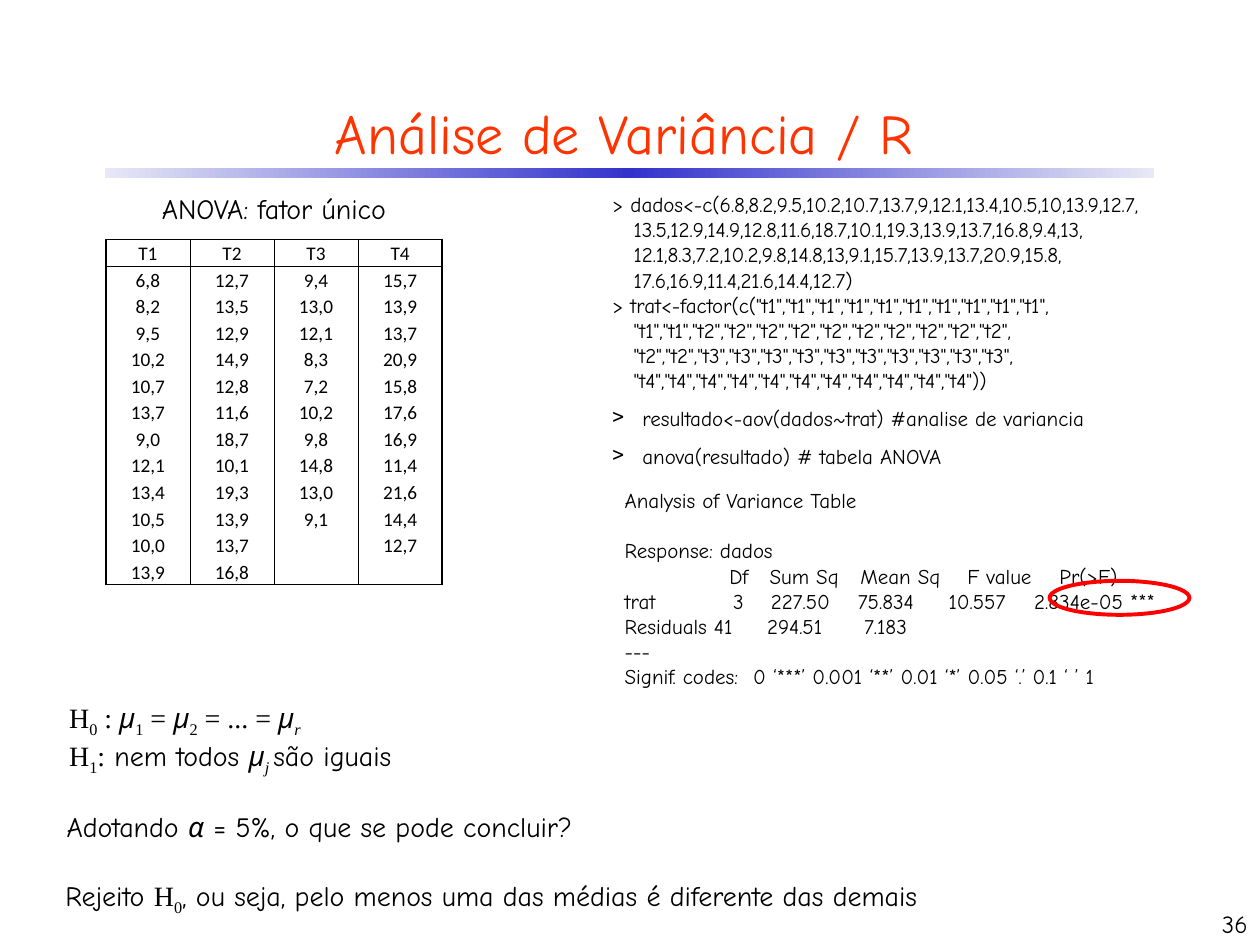
from copy import deepcopy
from dataclasses import dataclass

from lxml.etree import SubElement
from pptx import Presentation
from pptx.dml.color import RGBColor
from pptx.enum.shapes import MSO_SHAPE
from pptx.enum.text import MSO_ANCHOR, MSO_AUTO_SIZE, PP_ALIGN
from pptx.oxml.ns import qn
from pptx.util import Inches, Pt


@dataclass(frozen=True)
class Theme:
    black: RGBColor = RGBColor(0, 0, 0)
    white: RGBColor = RGBColor(255, 255, 255)
    title: RGBColor = RGBColor(0xFF, 0x33, 0x00)
    highlight: RGBColor = RGBColor(255, 0, 0)
    bar_edge: RGBColor = RGBColor(0xE8, 0xE8, 0xF6)
    bar_middle: RGBColor = RGBColor(0x33, 0x33, 0xCC)
    hand: str = "Comic Neue"
    serif: str = "Times New Roman"
    sans: str = "Calibri"
    title_size: int = 32
    body_size: int = 16
    number_size: int = 14
    code_size: int = 12
    table_size: int = 11


THEME = Theme()

SAMPLES = {
    "T1": "6,8 8,2 9,5 10,2 10,7 13,7 9,0 12,1 13,4 10,5 10,0 13,9",
    "T2": "12,7 13,5 12,9 14,9 12,8 11,6 18,7 10,1 19,3 13,9 13,7 16,8",
    "T3": "9,4 13,0 12,1 8,3 7,2 10,2 9,8 14,8 13,0 9,1",
    "T4": "15,7 13,9 13,7 20,9 15,8 17,6 16,9 11,4 21,6 14,4 12,7",
}

COMMANDS = [
    "> dados<-c(6.8,8.2,9.5,10.2,10.7,13.7,9,12.1,13.4,10.5,10,13.9,12.7,\v"
    "13.5,12.9,14.9,12.8,11.6,18.7,10.1,19.3,13.9,13.7,16.8,9.4,13,\v"
    "12.1,8.3,7.2,10.2,9.8,14.8,13,9.1,15.7,13.9,13.7,20.9,15.8,\v"
    "17.6,16.9,11.4,21.6,14.4,12.7)",
    '> trat<-factor(c("t1","t1","t1","t1","t1","t1","t1","t1","t1","t1",\v'
    '"t1","t1","t2","t2","t2","t2","t2","t2","t2","t2","t2","t2",\v'
    '"t2","t2","t3","t3","t3","t3","t3","t3","t3","t3","t3","t3",\v'
    '"t4","t4","t4","t4","t4","t4","t4","t4","t4","t4","t4"))',
]
PROMPTED_COMMANDS = [
    "resultado<-aov(dados~trat) #analise de variancia",
    "anova(resultado) # tabela ANOVA",
]

ANOVA_OUTPUT = [
    ("Analysis of Variance Table", []),
    ("Response: dados", []),
    ("\tDf\tSum Sq\tMean Sq\tF value\tPr(>F)", [0.83, 1.15, 1.87, 2.72, 3.45]),
    ("trat\t3\t227.50\t75.834\t10.557\t2.834e-05 ***", [0.86, 1.16, 1.85, 2.57, 3.25]),
    ("Residuals 41\t294.51\t7.183", [1.13, 1.9]),
    ("---", []),
    ("Signif. codes:\t0 ‘***’ 0.001 ‘**’ 0.01 ‘*’ 0.05 ‘.’ 0.1 ‘ ’ 1", [1.02]),
]

SERIF, SUB, ITALIC = "serif", "sub", "italic"
HYPOTHESES = [
    [("H", {SERIF}), ("0", {SERIF, SUB}), (" : ", {SERIF}),
     ("μ", {ITALIC}), ("1", {SERIF, SUB}), (" = ", {SERIF}),
     ("μ", {ITALIC}), ("2", {SERIF, SUB}), (" = ... = ", {SERIF}),
     ("μ", {ITALIC}), ("r", {SERIF, SUB, ITALIC})],
    [("H", {SERIF}), ("1", {SERIF, SUB}), (":", {SERIF}), (" nem todos ", set()),
     ("μ", {ITALIC}), ("j ", {SERIF, SUB, ITALIC}), ("são iguais", set())],
]
QUESTION = [("Adotando ", set()), ("α ", {ITALIC}), ("= 5%, o que se pode concluir?", set())]
CONCLUSION = [
    ("Rejeito ", set()), ("H", {SERIF}), ("0", {SERIF, SUB}),
    (", ou seja, pelo menos uma das médias é diferente das demais", set()),
]


def format_runs(paragraph, size, font=THEME.hand, color=THEME.black):
    for run in paragraph.runs:
        run.font.name = font
        run.font.size = Pt(size)
        run.font.color.rgb = color


def add_text(slide, place, lines, size=THEME.body_size, align=PP_ALIGN.LEFT):
    box = slide.shapes.add_textbox(*map(Inches, place))
    frame = box.text_frame
    frame.word_wrap = True
    frame.auto_size = MSO_AUTO_SIZE.SHAPE_TO_FIT_TEXT
    frame.text = "\n".join(lines)
    for paragraph in frame.paragraphs:
        paragraph.alignment = align
        format_runs(paragraph, size)
    return frame


def add_formula(slide, place, lines):
    frame = add_text(slide, place, [""] * len(lines))
    for paragraph, pieces in zip(frame.paragraphs, lines):
        for text, _ in pieces:
            paragraph.add_run().text = text
        format_runs(paragraph, THEME.body_size)
        for run, (_, style) in zip(paragraph.runs, pieces):
            run.font.italic = ITALIC in style
            if SERIF in style:
                run.font.name = THEME.serif
            if SUB in style:
                run.font._element.set("baseline", "-25000")


def set_hanging(paragraph, indent):
    properties = paragraph._p.get_or_add_pPr()
    properties.set("marL", str(Inches(indent)))
    properties.set("indent", str(-Inches(indent)))
    return properties


def add_commands(slide):
    frame = add_text(slide, (4.76, 1.47, 5.26, 2.32),
                     COMMANDS + PROMPTED_COMMANDS, THEME.code_size)
    for paragraph in frame.paragraphs[:len(COMMANDS)]:
        set_hanging(paragraph, 0.17)
    for paragraph in frame.paragraphs[len(COMMANDS):]:
        paragraph.line_spacing = 1.5
        SubElement(set_hanging(paragraph, 0.24), qn("a:buChar"), char=">")


def add_anova_output(slide):
    frame = add_text(slide, (4.86, 3.82, 5, 1.72),
                     [line for line, _ in ANOVA_OUTPUT], THEME.code_size)
    frame.paragraphs[1].space_before = Pt(14.4)
    for paragraph, (_, stops) in zip(frame.paragraphs, ANOVA_OUTPUT):
        if stops:
            tabs = SubElement(paragraph._p.get_or_add_pPr(), qn("a:tabLst"))
            for stop in stops:
                SubElement(tabs, qn("a:tab"), pos=str(Inches(stop)), algn="l")


def set_border(cell, side, width):
    line = SubElement(cell._tc.get_or_add_tcPr(), qn(f"a:ln{side}"), w=str(Pt(width)))
    if width:
        fill = SubElement(line, qn("a:solidFill"))
        SubElement(fill, qn("a:srgbClr"), val=str(THEME.black))
    else:
        SubElement(line, qn("a:noFill"))


def add_samples(slide):
    columns = [[name, *values.split()] for name, values in SAMPLES.items()]
    last_column, last_row = len(columns) - 1, max(map(len, columns)) - 1
    table = slide.shapes.add_table(last_row + 1, last_column + 1, Inches(0.84), Inches(1.9),
                                   Inches(2.67), Inches(2.74)).table
    table.first_row = table.horz_banding = False
    for c, values in enumerate(columns):
        for r in range(last_row + 1):
            cell = table.cell(r, c)
            cell.margin_left = cell.margin_right = cell.margin_top = Inches(0.01)
            cell.margin_bottom = 0
            cell.vertical_anchor = MSO_ANCHOR.BOTTOM
            paragraph = cell.text_frame.paragraphs[0]
            paragraph.alignment = PP_ALIGN.CENTER
            if r < len(values):
                paragraph.text = values[r]
                format_runs(paragraph, THEME.table_size, THEME.sans)
            else:
                SubElement(paragraph._p, qn("a:endParaRPr"), sz=str(THEME.table_size * 100))
            set_border(cell, "L", 1 if c == 0 else 0.5)
            set_border(cell, "R", 1 if c == last_column else 0.5)
            set_border(cell, "T", {0: 1, 1: 0.5}.get(r, 0))
            set_border(cell, "B", {0: 0.5, last_row: 1}.get(r, 0))
            cell.fill.solid()
            cell.fill.fore_color.rgb = THEME.white


def add_title(slide):
    title = slide.shapes.title
    title.left, title.top, title.width, title.height = map(Inches, (0.33, 0.67, 9.25, 0.75))
    title.text_frame.text = "Análise de Variância / R"
    title.text_frame.vertical_anchor = MSO_ANCHOR.MIDDLE
    heading = title.text_frame.paragraphs[0]
    heading.alignment = PP_ALIGN.CENTER
    format_runs(heading, THEME.title_size, color=THEME.title)


def add_title_bar(slide):
    bar = slide.shapes.add_shape(MSO_SHAPE.RECTANGLE, *map(Inches, (0.83, 1.33, 8.33, 0.08)))
    bar.shadow.inherit = False
    bar.line.fill.background()
    bar.fill.gradient()
    bar.fill.gradient_angle = 0
    stops = bar._element.spPr.find(qn("a:gradFill")).find(qn("a:gsLst"))
    stops.insert(1, deepcopy(stops[0]))
    colors = (THEME.bar_edge, THEME.bar_middle, THEME.bar_edge)
    for stop, position, color in zip(bar.fill.gradient_stops, (0, 0.5, 1), colors):
        stop.position = position
        stop.color.rgb = color


def add_highlight(slide):
    ring = slide.shapes.add_shape(MSO_SHAPE.OVAL, *map(Inches, (8.33, 4.61, 1.11, 0.27)))
    ring.shadow.inherit = False
    ring.fill.background()
    ring.line.color.rgb = THEME.highlight
    ring.line.width = Pt(2.25)


def main():
    deck = Presentation()
    deck.slide_width, deck.slide_height = Inches(10), Inches(7.5)
    slide = deck.slides.add_slide(deck.slide_layouts[5])
    add_title_bar(slide)
    add_title(slide)
    add_anova_output(slide)
    add_commands(slide)
    add_formula(slide, (0.45, 5.51, 3.42, 0.75), HYPOTHESES)
    add_formula(slide, (0.43, 6.38, 8.59, 0.37), [QUESTION])
    add_formula(slide, (0.42, 6.92, 8.59, 0.37), [CONCLUSION])
    add_highlight(slide)
    number = add_text(slide, (7.92, 7, 2.08, 0.5), ["36"], THEME.number_size, PP_ALIGN.RIGHT)
    number.auto_size = MSO_AUTO_SIZE.NONE
    number.vertical_anchor = MSO_ANCHOR.BOTTOM
    add_text(slide, (0.76, 1.47, 2.83, 0.37), ["ANOVA: fator único"], align=PP_ALIGN.CENTER)
    add_samples(slide)
    deck.save("out.pptx")


if __name__ == "__main__":
    main()
